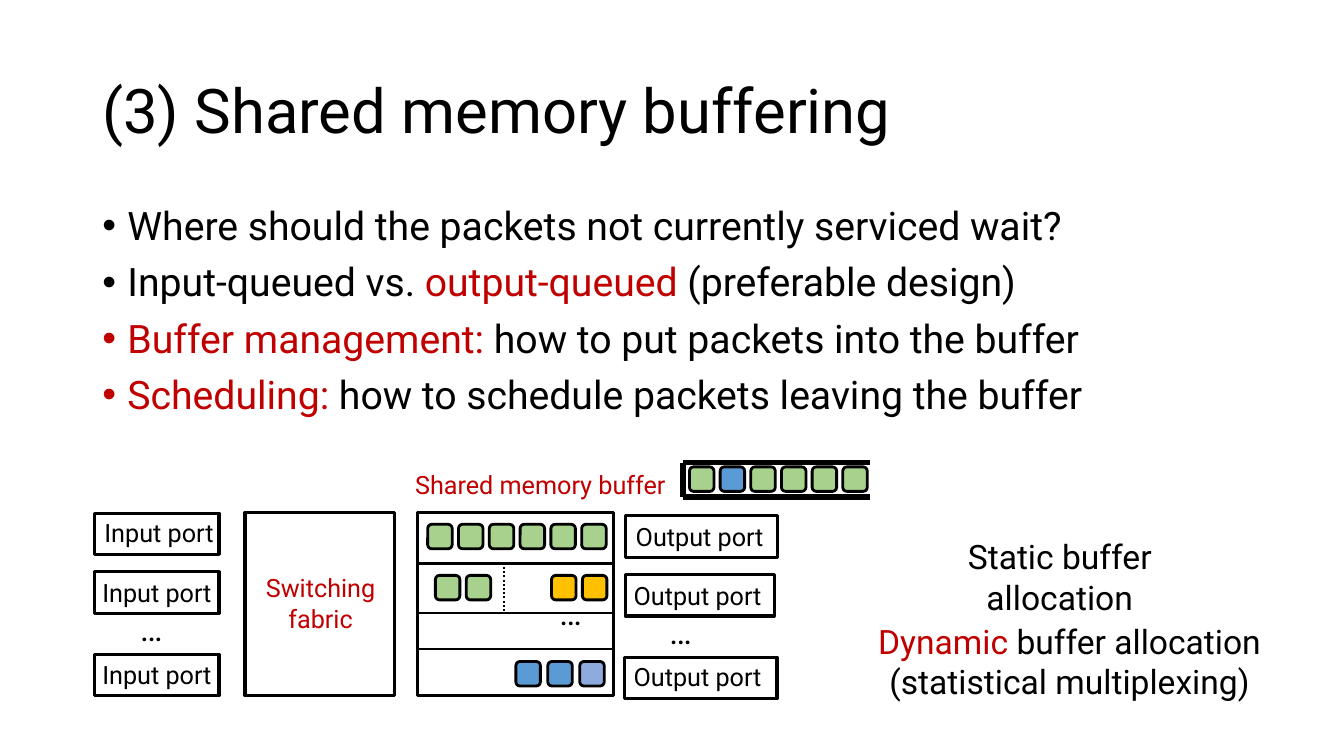
"""Build the slide on shared memory buffering in a switch."""
from lxml import etree
from pptx import Presentation
from pptx.dml.color import RGBColor
from pptx.enum import dml, shapes, text
from pptx.oxml.ns import qn
from pptx.util import Pt

BLACK = RGBColor(0x00, 0x00, 0x00)
RED = RGBColor(0xC0, 0x00, 0x00)
GREEN = RGBColor(0xA9, 0xD1, 0x8E)
BLUE = RGBColor(0x5B, 0x9B, 0xD5)
PALE_BLUE = RGBColor(0x8F, 0xAA, 0xDC)
ORANGE = RGBColor(0xFF, 0xC0, 0x00)
LEFT, CENTER = text.PP_ALIGN.LEFT, text.PP_ALIGN.CENTER
TOP, MIDDLE = text.MSO_ANCHOR.TOP, text.MSO_ANCHOR.MIDDLE

deck = Presentation()
deck.slide_width, deck.slide_height = Pt(960), Pt(540)
slide = deck.slides.add_slide(deck.slide_layouts[6])


def write(wording, place, size=18, align=LEFT, anchor=TOP, spacing=1, before=0, bullet=None):
    """Add a text box; words between asterisks are red."""
    frame = slide.shapes.add_textbox(*map(Pt, place)).text_frame
    frame.word_wrap = True
    frame.vertical_anchor = anchor
    for number, line in enumerate(wording.split("\n")):
        paragraph = frame.add_paragraph() if number else frame.paragraphs[0]
        paragraph.alignment = align
        paragraph.line_spacing = spacing
        paragraph.space_before = Pt(before)
        if bullet:
            properties = paragraph._p.get_or_add_pPr()
            properties.set("marL", str(Pt(18)))
            properties.set("indent", str(Pt(-18)))
            etree.SubElement(properties, qn("a:buFont"), typeface="Arial")
            etree.SubElement(properties, qn("a:buChar"), char=bullet)
        for part, words in enumerate(line.split("*")):
            if words:
                run = paragraph.add_run()
                run.text = words
                run.font.name = "Roboto"
                run.font.size = Pt(size)
                run.font.color.rgb = RED if part % 2 else BLACK


write("(3) Shared memory buffering", (66, 29, 828, 104), size=44, anchor=MIDDLE, spacing=0.9)
write("Where should the packets not currently serviced wait?\n"
      "Input-queued vs. *output-queued* (preferable design)\n"
      "*Buffer management:* how to put packets into the buffer\n"
      "*Scheduling:* how to schedule packets leaving the buffer",
      (66, 144, 828, 343), size=28, spacing=0.9, before=10, bullet="•")

switching_fabric = (175, 366, 106.5, 131)
shared_memory = (298, 366, 140.5, 131)
input_ports = [(67.5, top, 89, 29.5) for top in (366.5, 408.5, 467.5)]
output_ports = [(446.5, 368.5, 109, 29.5), (446.5, 410.5, 106.5, 29.5), (446, 469.5, 109, 29.5)]
for place in [switching_fabric, shared_memory, *input_ports, *output_ports]:
    block = slide.shapes.add_shape(shapes.MSO_SHAPE.RECTANGLE, *map(Pt, place))
    block.shadow.inherit = False
    block.fill.background()
    block.line.color.rgb = BLACK
    block.line.width = Pt(2.25)

write("*Switching fabric*", (181.5, 405.5, 95, 51), align=CENTER)
write("*Shared memory buffer*", (280, 332, 212, 29), align=CENTER)
for left, top in ((67.5, 366), (66, 408.5), (66, 467.5)):
    write("Input port", (left, top, 101, 29))
for left, top in ((447, 368.5), (445.5, 411), (445.5, 469)):
    write("Output port", (left, top, 123, 29))
for left, top in ((93, 430.5), (471, 432.5), (392.5, 419)):
    write("…", (left, top, 41, 36), size=24)
write("Static buffer allocation", (631, 379.5, 252, 36), size=24, align=CENTER)
write("*Dynamic* buffer allocation\n(statistical multiplexing)",
      (609, 440, 310, 65.5), size=24, align=CENTER)

queue = slide.shapes.add_group_shape()
rules = [
    (queue, 488, 330.5, 621.5, 330.5, 4, None),
    (queue, 488, 355, 621.5, 355, 4, None),
    (queue, 488, 355, 488, 331, 4, None),
    (slide, 360, 436.5, 360, 402, 1.5, dml.MSO_LINE.ROUND_DOT),
    (slide, 360, 403, 438.5, 403, 1.5, dml.MSO_LINE.ROUND_DOT),
]
rules += [(slide, 298, y, 438.5, y, 1.5, None) for y in (402.5, 438, 463.5)]
for owner, *ends, weight, dash in rules:
    rule = owner.shapes.add_connector(shapes.MSO_CONNECTOR.STRAIGHT, *map(Pt, ends))
    rule.line.color.rgb = BLACK
    rule.line.width = Pt(weight)
    if dash:
        rule.line.dash_style = dash
    etree.SubElement(rule._element.spPr, qn("a:effectLst"))

packet_rows = [
    (queue, 492.5, 333.5, 21.9, [GREEN, BLUE] + [GREEN] * 4),
    (slide, 305.5, 374.5, 22, [GREEN] * 6),
    (slide, 311, 411, 22, [GREEN] * 2),
    (slide, 394, 411, 22, [ORANGE] * 2),
    (slide, 368.5, 472.5, 22.8, [BLUE, BLUE, PALE_BLUE]),
]
for owner, left, top, pitch, colors in packet_rows:
    for position, color in enumerate(colors):
        packet = owner.shapes.add_shape(
            shapes.MSO_SHAPE.ROUNDED_RECTANGLE,
            Pt(left + position * pitch), Pt(top), Pt(17.5), Pt(17.5))
        packet.shadow.inherit = False
        packet.fill.solid()
        packet.fill.fore_color.rgb = color
        packet.line.color.rgb = BLACK
        packet.line.width = Pt(2)

deck.save("out.pptx")
